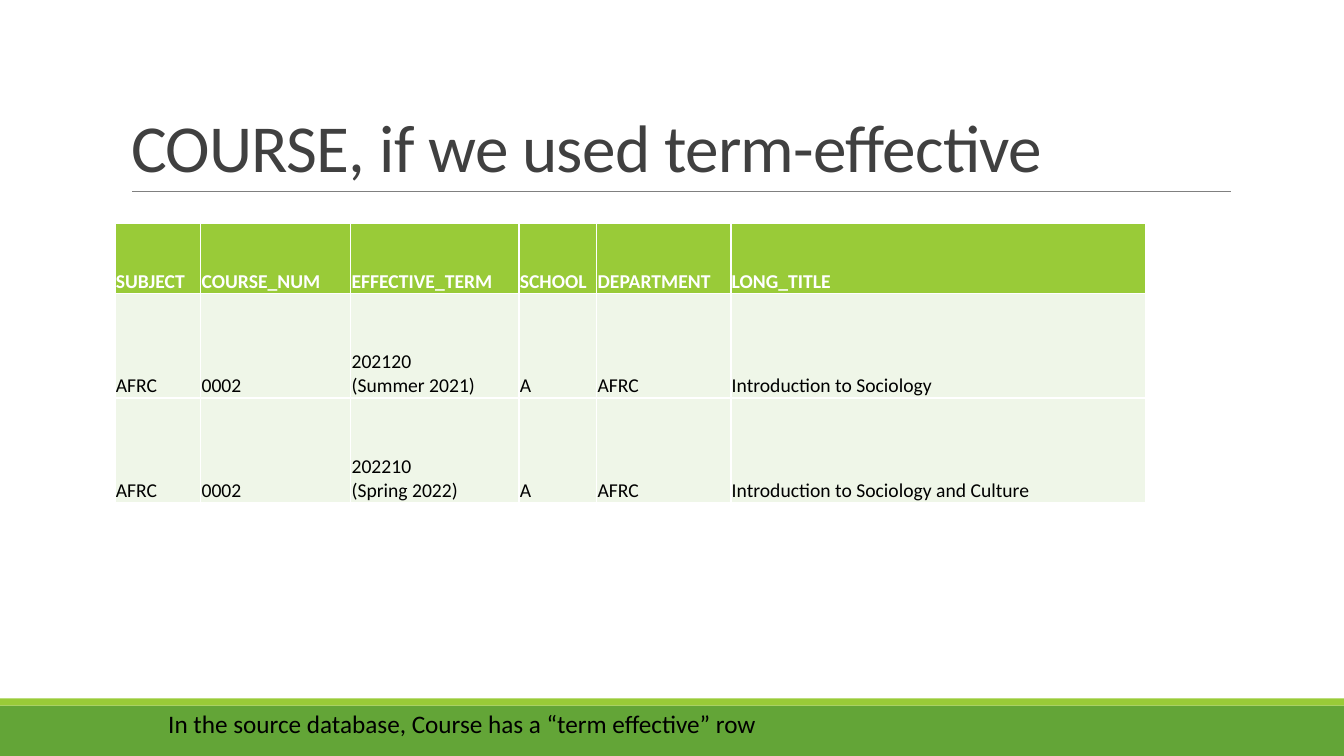
from lxml import etree
from pptx import Presentation
from pptx import util as u
from pptx.dml.color import RGBColor
from pptx.enum import shapes, text
from pptx.oxml import ns

GREEN = RGBColor(0x63, 0xA5, 0x37)
LIME = RGBColor(0x99, 0xCB, 0x38)
PALE = RGBColor(0xEF, 0xF6, 0xE8)
GRAY = RGBColor(0x80, 0x80, 0x80)
CHARCOAL = RGBColor(0x40, 0x40, 0x40)
BLACK = RGBColor(0, 0, 0)
WHITE = RGBColor(0xFF, 0xFF, 0xFF)

COLUMN_WIDTHS = [2.16, 3.78, 4.24, 1.96, 3.38, 10.46]
ROW_HEIGHTS = [1.75, 2.64, 2.64]
COURSES = [
    ["SUBJECT", "COURSE_NUM", "EFFECTIVE_TERM", "SCHOOL", "DEPARTMENT", "LONG_TITLE"],
    ["AFRC", "0002", "202120\n(Summer 2021)", "A", "AFRC", "Introduction to Sociology"],
    ["AFRC", "0002", "202210\n(Spring 2022)", "A", "AFRC",
     "Introduction to Sociology and Culture"],
]


class CoursePage:
    font = "Calibri"

    def __init__(self, page):
        self.page = page

    def add_wording(self, para, wording, size, color, bold=False):
        """Add wording to a paragraph, one run per line, and return the last run."""
        for number, line in enumerate(wording.split("\n")):
            if number:
                para.add_line_break()
            span = para.add_run()
            span.text = line
            span.font.name = self.font
            span.font.size = u.Pt(size)
            span.font.bold = bold
            span.font.color.rgb = color
        return span

    def band(self, top, height, color):
        box = self.page.shapes.add_shape(
            shapes.MSO_SHAPE.RECTANGLE, 0, u.Cm(top), u.Cm(33.87), u.Cm(height))
        box.shadow.inherit = False
        box.fill.solid()
        box.fill.fore_color.rgb = color
        box.line.fill.background()

    def rule(self, left, right, y):
        line = self.page.shapes.add_connector(
            shapes.MSO_CONNECTOR.STRAIGHT, u.Cm(left), u.Cm(y), u.Cm(right), u.Cm(y))
        line.line.color.rgb = GRAY
        line.line.width = u.Pt(0.5)
        etree.SubElement(line._element.spPr, ns.qn("a:effectLst"))

    def title(self, wording, left, top, width, height):
        box = self.page.shapes.title
        box.left, box.top = u.Cm(left), u.Cm(top)
        box.width, box.height = u.Cm(width), u.Cm(height)
        frame = box.text_frame
        frame.auto_size = text.MSO_AUTO_SIZE.NONE
        frame.vertical_anchor = text.MSO_ANCHOR.BOTTOM
        para = frame.paragraphs[0]
        para.alignment = text.PP_ALIGN.LEFT
        para.line_spacing = 0.85
        span = self.add_wording(para, wording, 48, CHARCOAL)
        span._r.get_or_add_rPr().set("spc", "-50")

    def note(self, wording, left, top, width, height):
        box = self.page.shapes.add_textbox(
            u.Cm(left), u.Cm(top), u.Cm(width), u.Cm(height))
        box.text_frame.word_wrap = True
        box.text_frame.auto_size = text.MSO_AUTO_SIZE.SHAPE_TO_FIT_TEXT
        self.add_wording(box.text_frame.paragraphs[0], wording, 18, BLACK)

    def borders(self, cell):
        properties = cell._tc.get_or_add_tcPr()
        for side in ("lnL", "lnR", "lnT", "lnB"):
            edge = etree.SubElement(properties, ns.qn("a:" + side), w=str(u.Pt(1)))
            fill = etree.SubElement(edge, ns.qn("a:solidFill"))
            etree.SubElement(fill, ns.qn("a:srgbClr"), val=str(WHITE))

    def table(self, rows, left, top, widths, heights):
        grid = self.page.shapes.add_table(
            len(rows), len(widths), u.Cm(left), u.Cm(top),
            u.Cm(sum(widths)), u.Cm(sum(heights))).table
        for column, width in zip(grid.columns, widths):
            column.width = u.Cm(width)
        for r, (row, height) in enumerate(zip(rows, heights)):
            grid.rows[r].height = u.Cm(height)
            header = r == 0
            for c, wording in enumerate(row):
                cell = grid.cell(r, c)
                cell.vertical_anchor = text.MSO_ANCHOR.BOTTOM
                cell.margin_left = cell.margin_right = cell.margin_top = u.Cm(0.02)
                cell.margin_bottom = 0
                self.borders(cell)
                cell.fill.solid()
                cell.fill.fore_color.rgb = LIME if header else PALE
                self.add_wording(cell.text_frame.paragraphs[0], wording, 14,
                                 WHITE if header else BLACK, header)


def main():
    deck = Presentation()
    deck.slide_width, deck.slide_height = u.Cm(33.87), u.Cm(19.05)
    page = CoursePage(deck.slides.add_slide(deck.slide_layouts.get_by_name("Title Only")))
    page.band(17.78, 1.27, GREEN)
    page.band(17.6, 0.18, LIME)
    page.rule(3.33, 31.01, 4.83)
    page.title("COURSE, if we used term-effective", 3.05, 0.79, 27.94, 4.04)
    page.table(COURSES, 2.9, 5.64, COLUMN_WIDTHS, ROW_HEIGHTS)
    page.note("In the source database, Course has a “term effective” row",
              3.99, 17.73, 26.62, 1.02)
    deck.save("out.pptx")


if __name__ == "__main__":
    main()
